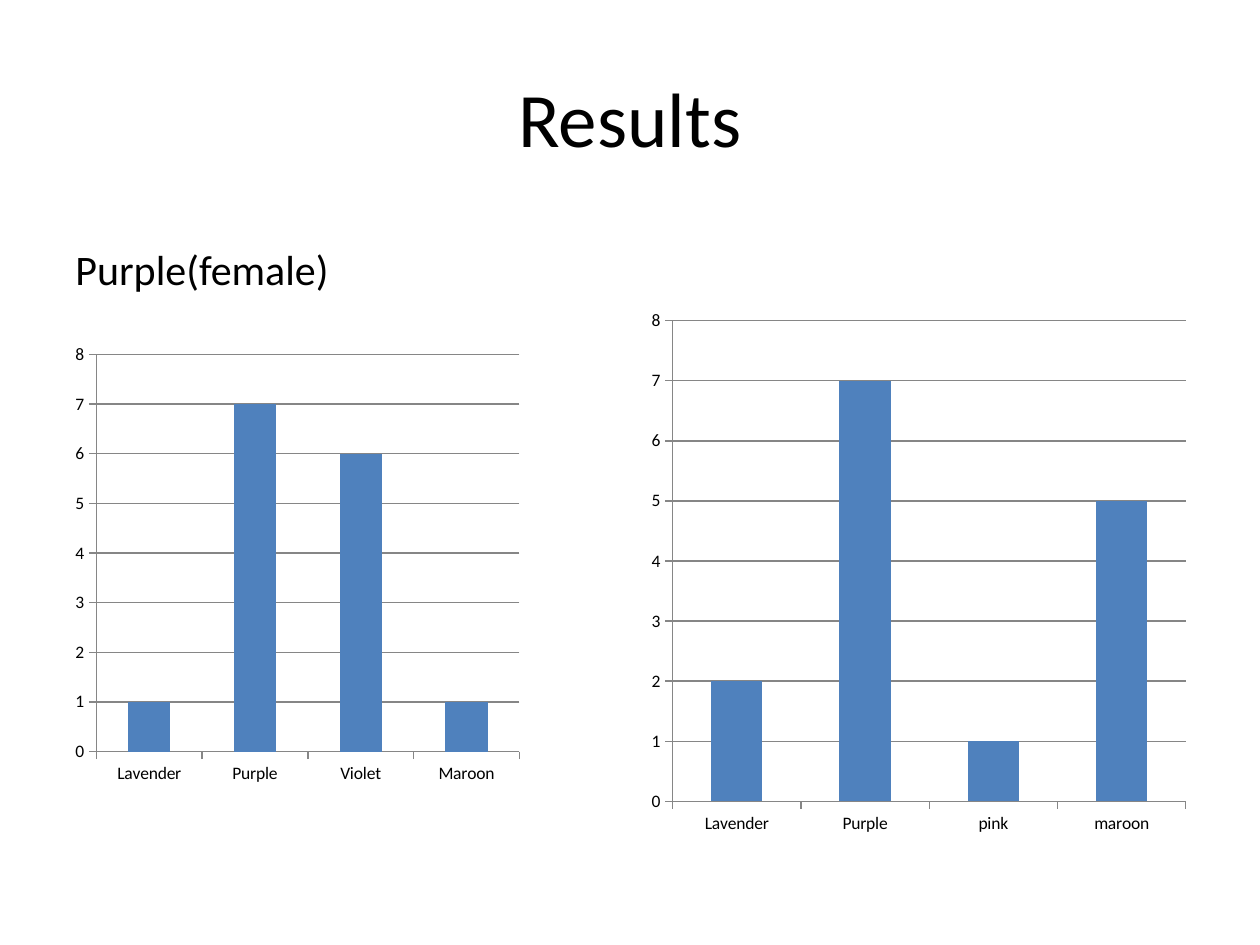
from dataclasses import dataclass

from lxml.etree import SubElement
from pptx import Presentation
from pptx.chart.data import CategoryChartData
from pptx.dml.color import RGBColor
from pptx.enum.chart import XL_CHART_TYPE, XL_TICK_MARK
from pptx.enum.text import MSO_ANCHOR, PP_ALIGN
from pptx.oxml.ns import qn
from pptx.util import Cm, Pt


@dataclass(frozen=True)
class Theme:
    font: str = "Calibri"
    text: RGBColor = RGBColor(0, 0, 0)
    bar: RGBColor = RGBColor(0x4F, 0x81, 0xBD)
    line: RGBColor = RGBColor(0x86, 0x86, 0x86)
    title_size: int = 44
    heading_size: int = 24
    chart_size: int = 10


@dataclass(frozen=True)
class Box:
    left: float
    top: float
    width: float
    height: float

    def lengths(self):
        return [Cm(value) for value in (self.left, self.top, self.width, self.height)]


THEME = Theme()
PAGE_WIDTH, PAGE_HEIGHT, MARGIN = 25.4, 19.05, 1.27
COLUMN_WIDTH = 11.22
RIGHT_COLUMN = PAGE_WIDTH - MARGIN - COLUMN_WIDTH
CHART_TOP, CHART_HEIGHT = 6.05, 10.97
HEADING_HEIGHT = 1.78


def apply(target, values):
    for name, value in values.items():
        setattr(target, name, value)


def style_font(font, size):
    apply(font, {"name": THEME.font, "size": Pt(size), "bold": False})
    font.color.rgb = THEME.text


def write_text(shape, words, size, align, anchor):
    frame = shape.text_frame
    apply(frame, {"word_wrap": True, "vertical_anchor": anchor})
    para = frame.paragraphs[0]
    para.alignment = align
    span = para.add_run()
    span.text = words
    style_font(span.font, size)


def place_title(page, box, words):
    title = page.shapes.title
    apply(title, dict(zip(("left", "top", "width", "height"), box.lengths())))
    write_text(title, words, THEME.title_size, PP_ALIGN.CENTER, MSO_ANCHOR.MIDDLE)


def place_heading(page, box, words):
    heading = page.shapes.add_textbox(*box.lengths())
    write_text(heading, words, THEME.heading_size, PP_ALIGN.LEFT, MSO_ANCHOR.BOTTOM)


def set_plot_area(chart, area):
    plot_area = chart.plots[0]._element.getparent()
    for old in plot_area.findall(qn("c:layout")):
        plot_area.remove(old)
    layout = SubElement(plot_area, qn("c:layout"))
    plot_area.insert(0, layout)
    manual = SubElement(layout, qn("c:manualLayout"))
    settings = {"layoutTarget": "inner", "xMode": "edge", "yMode": "edge", **area}
    for name, value in settings.items():
        SubElement(manual, qn(f"c:{name}")).set("val", str(value))


def place_chart(page, box, counts, plot_area=None):
    data = CategoryChartData()
    data.categories = list(counts)
    data.add_series("Series 1", list(counts.values()))
    frame = page.shapes.add_chart(XL_CHART_TYPE.COLUMN_CLUSTERED, *box.lengths(), data)
    chart = frame.chart
    apply(chart, {"has_legend": False, "has_title": False})
    style_font(chart.font, THEME.chart_size)

    plot = chart.plots[0]
    apply(plot, {"gap_width": 150, "vary_by_categories": False})
    fill = plot.series[0].format.fill
    fill.solid()
    fill.fore_color.rgb = THEME.bar

    value_axis, category_axis = chart.value_axis, chart.category_axis
    apply(value_axis, {"minimum_scale": 0, "maximum_scale": 8, "major_unit": 1})
    for axis, gridlines in ((value_axis, True), (category_axis, False)):
        apply(axis, {"has_major_gridlines": gridlines,
                     "major_tick_mark": XL_TICK_MARK.OUTSIDE,
                     "minor_tick_mark": XL_TICK_MARK.NONE})
    for part in (value_axis, category_axis, value_axis.major_gridlines):
        part.format.line.color.rgb = THEME.line
        part.format.line.width = Pt(0.75)
    if plot_area:
        set_plot_area(chart, plot_area)


def build_results(deck):
    page = deck.slides.add_slide(deck.slide_layouts[5])
    place_title(page, Box(MARGIN, 0.76, PAGE_WIDTH - 2 * MARGIN, 3.18), "Results")
    place_heading(page, Box(MARGIN, CHART_TOP - HEADING_HEIGHT, COLUMN_WIDTH, HEADING_HEIGHT),
                  "Purple(female)")
    place_chart(page, Box(MARGIN, CHART_TOP, COLUMN_WIDTH, CHART_HEIGHT),
                {"Lavender": 1, "Purple": 7, "Violet": 6, "Maroon": 1},
                {"x": 0.06, "y": 0.1, "w": 0.76, "h": 0.73})
    place_chart(page, Box(RIGHT_COLUMN, CHART_TOP, COLUMN_WIDTH, CHART_HEIGHT),
                {"Lavender": 2, "Purple": 7, "pink": 1, "maroon": 5})


def main():
    deck = Presentation()
    apply(deck, {"slide_width": Cm(PAGE_WIDTH), "slide_height": Cm(PAGE_HEIGHT)})
    build_results(deck)
    deck.save("out.pptx")


if __name__ == "__main__":
    main()
